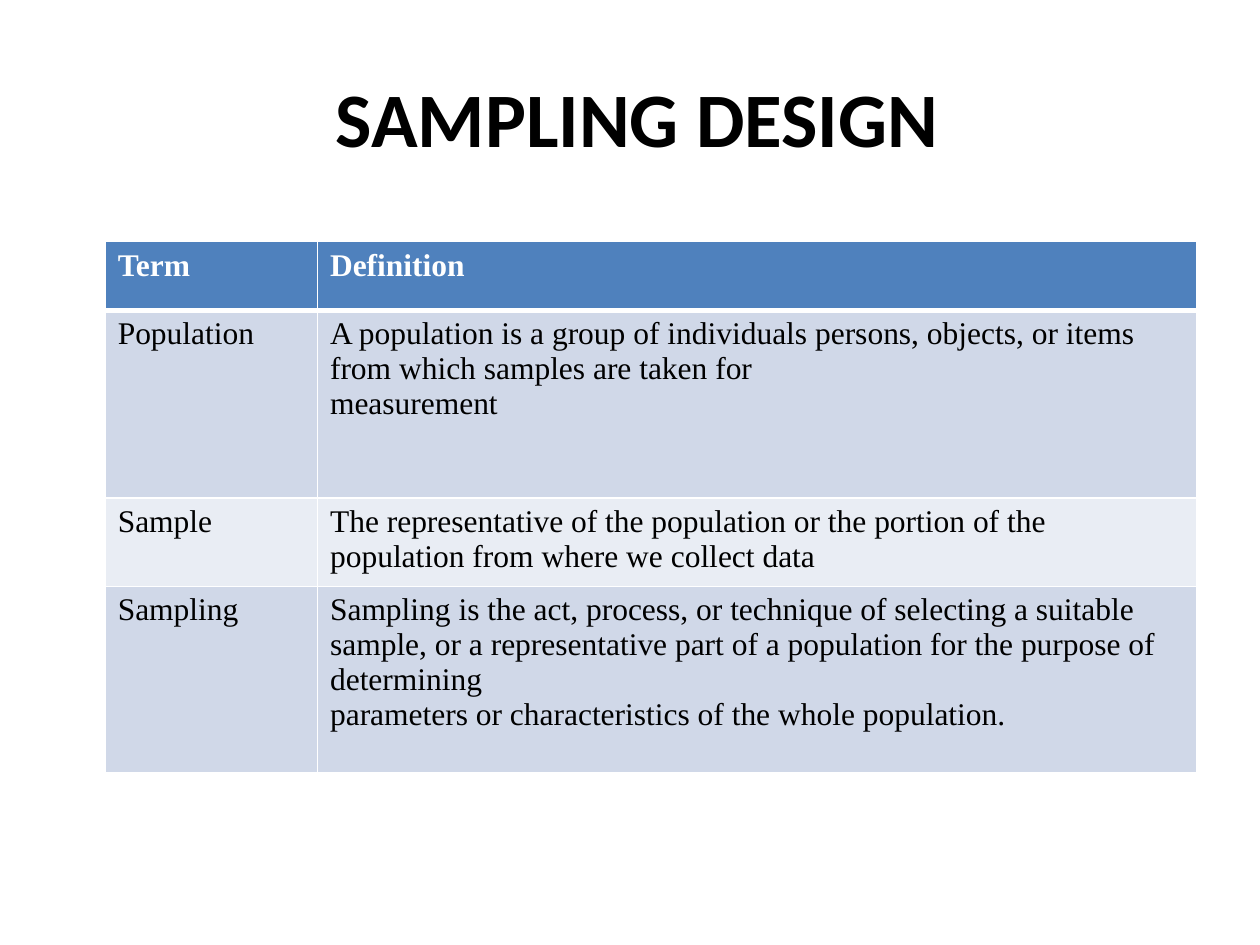
from dataclasses import dataclass

from lxml import etree
from pptx import Presentation
from pptx.dml.color import RGBColor
from pptx.enum.text import MSO_ANCHOR, PP_ALIGN
from pptx.oxml.ns import qn
from pptx.util import Cm, Pt

MIDDLE = MSO_ANCHOR.MIDDLE
CENTER = PP_ALIGN.CENTER

BLACK = RGBColor(0x00, 0x00, 0x00)
WHITE = RGBColor(0xFF, 0xFF, 0xFF)
HEADER_BLUE = RGBColor(0x4F, 0x81, 0xBD)
DARK_BAND = RGBColor(0xD0, 0xD8, 0xE8)
LIGHT_BAND = RGBColor(0xE9, 0xED, 0xF4)

COLUMN_WIDTHS = (Cm(4.28), Cm(17.73))
THIN, THICK = Pt(1), Pt(3)


@dataclass(frozen=True)
class Entry:
    term: str
    definition: tuple[str, ...]
    height: Cm


HEADER = Entry("Term", ("Definition",), Cm(1.39))
ENTRIES = (
    Entry(
        "Population",
        (
            "A population is a group of individuals persons, objects, or items "
            "from which samples are taken for",
            "measurement",
        ),
        Cm(3.78),
    ),
    Entry(
        "Sample",
        (
            "The representative of the population or the portion of the "
            "population from where we collect data",
        ),
        Cm(1.67),
    ),
    Entry(
        "Sampling",
        (
            "Sampling is the act, process, or technique of selecting a suitable",
            "sample, or a representative part of a population for the purpose "
            "of determining",
            "parameters or characteristics of the whole population.",
        ),
        Cm(3.76),
    ),
)


def add_span(para, text: str, font: str, size: int, color: RGBColor, bold: bool) -> None:
    span = para.add_run()
    span.text = text
    span.font.name = font
    span.font.size = Pt(size)
    span.font.color.rgb = color
    span.font.bold = bold


def add_title(page, text: str) -> None:
    box = page.shapes.add_textbox(Cm(1.27), Cm(0.76), Cm(22.86), Cm(3.18))
    frame = box.text_frame
    frame.word_wrap = True
    frame.vertical_anchor = MIDDLE
    frame.margin_left = Cm(0.55)
    para = frame.paragraphs[0]
    para.alignment = CENTER
    add_span(para, text, "Calibri", 44, BLACK, True)


def add_borders(cell, top: Pt, bottom: Pt) -> None:
    """Give the cell white edges; call this before setting its fill."""
    properties = cell._tc.get_or_add_tcPr()
    for side, width in (("L", THIN), ("R", THIN), ("T", top), ("B", bottom)):
        line = etree.SubElement(properties, qn(f"a:ln{side}"), w=str(width))
        fill = etree.SubElement(line, qn("a:solidFill"))
        etree.SubElement(fill, qn("a:srgbClr"), val=str(WHITE))


def fill_cell(cell, lines: tuple[str, ...], row: int) -> None:
    is_header = row == 0
    add_borders(cell, THICK if row == 1 else THIN, THICK if is_header else THIN)
    cell.fill.solid()
    band = DARK_BAND if row % 2 else LIGHT_BAND
    cell.fill.fore_color.rgb = HEADER_BLUE if is_header else band
    para = cell.text_frame.paragraphs[0]
    for index, line in enumerate(lines):
        if index:
            para.add_line_break()
        color = WHITE if is_header else BLACK
        add_span(para, line, "Times New Roman", 18, color, is_header)


def add_definitions(page, entries: tuple[Entry, ...]) -> None:
    table = page.shapes.add_table(
        len(entries), len(COLUMN_WIDTHS), Cm(2.12), Cm(4.87),
        sum(COLUMN_WIDTHS), sum(entry.height for entry in entries),
    ).table
    for column, width in zip(table.columns, COLUMN_WIDTHS):
        column.width = width
    for row, entry in enumerate(entries):
        table.rows[row].height = entry.height
        fill_cell(table.cell(row, 0), (entry.term,), row)
        fill_cell(table.cell(row, 1), entry.definition, row)


def main() -> None:
    deck = Presentation()
    deck.slide_width, deck.slide_height = Cm(25.4), Cm(19.05)
    page = deck.slides.add_slide(deck.slide_layouts[6])
    add_title(page, "SAMPLING DESIGN")
    add_definitions(page, (HEADER, *ENTRIES))
    deck.save("out.pptx")


if __name__ == "__main__":
    main()
